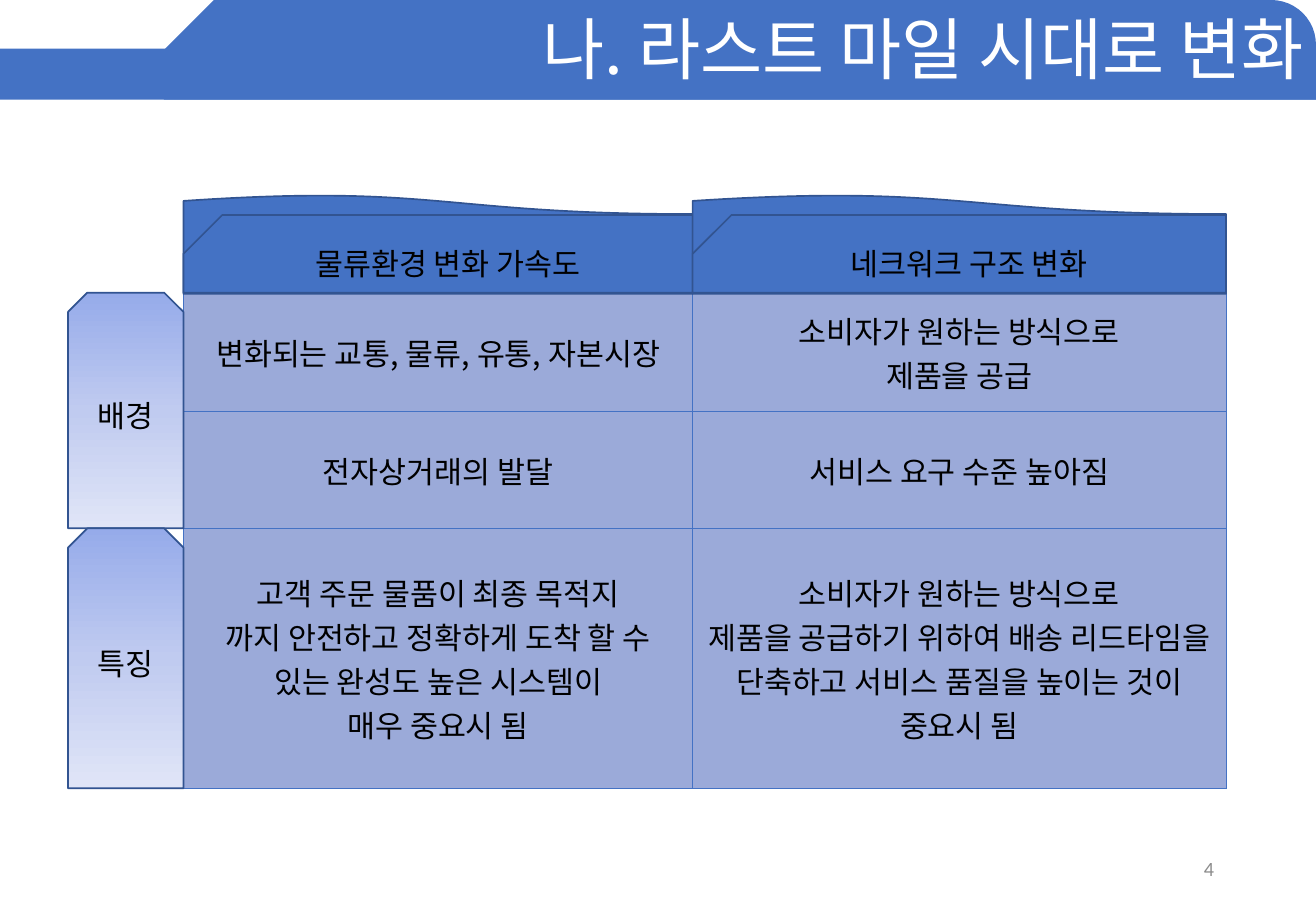
"""Build the slide on the change to the last-mile era."""
from copy import deepcopy
from dataclasses import dataclass

from lxml import etree
from pptx import Presentation
from pptx.dml.color import RGBColor
from pptx.enum.shapes import MSO_SHAPE
from pptx.enum.text import MSO_ANCHOR, PP_ALIGN
from pptx.oxml.ns import qn
from pptx.util import Inches, Pt

BLUE = RGBColor(0x44, 0x72, 0xC4)
OUTLINE = RGBColor(0x32, 0x54, 0x91)
CELL_BLUE = RGBColor(0x9B, 0xAA, 0xD9)
BLACK = RGBColor(0, 0, 0)
WHITE = RGBColor(0xFF, 0xFF, 0xFF)
GREY = RGBColor(0x8C, 0x8C, 0x8C)
LABEL_GRADIENT = (
    (0, RGBColor(0x96, 0xAB, 0xEA)),
    (0.5, RGBColor(0xC0, 0xCB, 0xF0)),
    (1, RGBColor(0xE0, 0xE5, 0xF7)),
)
KOREAN = "Noto Sans CJK KR"
LATIN = "Calibri"
CENTER, RIGHT = PP_ALIGN.CENTER, PP_ALIGN.RIGHT
MIDDLE = MSO_ANCHOR.MIDDLE
RECTANGLE = MSO_SHAPE.RECTANGLE
SNIP_ROUND = MSO_SHAPE.SNIP_ROUND_RECTANGLE
SNIP_ONE = MSO_SHAPE.SNIP_1_RECTANGLE
SNIP_TWO = MSO_SHAPE.SNIP_2_SAME_RECTANGLE
WAVE = MSO_SHAPE.FLOWCHART_DOCUMENT

SLIDE_WIDTH = 10.83
BAND_HEIGHT = 0.82
TABLE_LEFT, TABLE_TOP = 1.51, 2.41
COLUMN_WIDTHS = (4.19, 4.39)
ROW_HEIGHTS = (0.98, 0.96, 2.14)
LABEL_WIDTH = 0.95


@dataclass(frozen=True)
class Box:
    left: float
    top: float
    width: float
    height: float

    def lengths(self) -> tuple:
        return tuple(map(Inches, (self.left, self.top, self.width, self.height)))


@dataclass(frozen=True)
class Heading:
    text: str
    left: float
    width: float


@dataclass(frozen=True)
class SideLabel:
    text: str
    top: float
    height: float


HEADINGS = (
    Heading("물류환경 변화 가속도", TABLE_LEFT, COLUMN_WIDTHS[0]),
    Heading("네크워크 구조 변화", TABLE_LEFT + COLUMN_WIDTHS[0], COLUMN_WIDTHS[1]),
)
BACKGROUND_HEIGHT = sum(ROW_HEIGHTS[:2])
SIDE_LABELS = (
    SideLabel("배경", TABLE_TOP, BACKGROUND_HEIGHT),
    SideLabel("특징", TABLE_TOP + BACKGROUND_HEIGHT, ROW_HEIGHTS[2]),
)
CONTENT = (
    ("변화되는 교통, 물류, 유통, 자본시장", "소비자가 원하는 방식으로\n제품을 공급"),
    ("전자상거래의 발달", "서비스 요구 수준 높아짐"),
    (
        "고객 주문 물품이 최종 목적지\n까지 안전하고 정확하게 도착 할 수\n"
        "있는 완성도 높은 시스템이\n매우 중요시 됨",
        "소비자가 원하는 방식으로\n제품을 공급하기 위하여 배송 리드타임을 "
        "단축하고 서비스 품질을 높이는 것이 중요시 됨",
    ),
)


def write(frame, text: str, size: float = 18, color: RGBColor = BLACK,
          align=CENTER, face: str = KOREAN) -> None:
    frame.text = text
    frame.word_wrap = True
    for paragraph in frame.paragraphs:
        paragraph.alignment = align
        font = paragraph.font
        font.size, font.name = Pt(size), face
        font.color.rgb = color
        defaults = paragraph._p.pPr.find(qn("a:defRPr"))
        etree.SubElement(defaults, qn("a:ea"), typeface=face)


def add_panel(slide, kind, box: Box, outlined: bool = True, flip: str = ""):
    panel = slide.shapes.add_shape(kind, *box.lengths())
    panel.shadow.inherit = False
    panel.fill.solid()
    panel.fill.fore_color.rgb = BLUE
    if outlined:
        panel.line.color.rgb = OUTLINE
        panel.line.width = Pt(1)
    else:
        panel.line.fill.background()
    if flip:
        panel.element.spPr.xfrm.set(flip, "1")
    return panel


def add_title(slide) -> None:
    add_panel(slide, RECTANGLE, Box(0, 0.4, SLIDE_WIDTH, 0.42), False)
    band = add_panel(slide, SNIP_ROUND, Box(1.35, 0, 9.48, BAND_HEIGHT), False, "flipH")
    band.adjustments[0], band.adjustments[1] = 0.449, 0.5
    title = slide.shapes.title
    slide.shapes.element.append(title.element)
    title.left, title.top, title.width, title.height = Box(
        0, 0.02, SLIDE_WIDTH, BAND_HEIGHT).lengths()
    write(title.text_frame, "나. 라스트 마일 시대로 변화", 40, WHITE, RIGHT)
    title.text_frame.vertical_anchor = MIDDLE
    title.text_frame.paragraphs[0].line_spacing = 0.9


def style_cell(cell, text: str) -> None:
    write(cell.text_frame, text)
    cell.vertical_anchor = MIDDLE
    properties = cell._tc.get_or_add_tcPr()
    for side in ("lnL", "lnR", "lnT", "lnB"):
        border = etree.SubElement(properties, qn(f"a:{side}"), w=str(Pt(0.5)))
        paint = etree.SubElement(border, qn("a:solidFill"))
        etree.SubElement(paint, qn("a:srgbClr"), val=str(BLUE))
    cell.fill.solid()
    cell.fill.fore_color.rgb = CELL_BLUE


def add_comparison(slide) -> None:
    box = Box(TABLE_LEFT, TABLE_TOP, sum(COLUMN_WIDTHS), sum(ROW_HEIGHTS))
    table = slide.shapes.add_table(
        len(ROW_HEIGHTS), len(COLUMN_WIDTHS), *box.lengths()).table
    table.first_row = table.horz_banding = False
    for column, width in zip(table.columns, COLUMN_WIDTHS):
        column.width = Inches(width)
    for row, height, texts in zip(table.rows, ROW_HEIGHTS, CONTENT):
        row.height = Inches(height)
        for cell, text in zip(row.cells, texts):
            style_cell(cell, text)


def add_heading(slide, heading: Heading) -> None:
    add_panel(slide, WAVE, Box(heading.left, 1.6, heading.width, 0.82), flip="flipV")
    front = add_panel(
        slide, SNIP_ONE, Box(heading.left, 1.77, heading.width, 0.64), flip="flipH")
    front.adjustments[0] = 0.5
    write(front.text_frame, heading.text)


def add_side_label(slide, label: SideLabel) -> None:
    box = Box(TABLE_LEFT - LABEL_WIDTH, label.top, LABEL_WIDTH, label.height)
    tab = add_panel(slide, SNIP_TWO, box)
    tab.fill.gradient()
    tab.fill.gradient_angle = 270
    stop_list = tab.element.spPr.find(f".//{qn('a:gsLst')}")
    stop_list.insert(1, deepcopy(stop_list[0]))
    for stop, (position, color) in zip(tab.fill.gradient_stops, LABEL_GRADIENT):
        stop.position = position
        stop.color.rgb = color
    write(tab.text_frame, label.text)


def add_page_number(slide) -> None:
    number = slide.shapes.add_textbox(*Box(7.65, 6.95, 2.44, 0.4).lengths())
    write(number.text_frame, "4", 12, GREY, RIGHT, LATIN)
    number.text_frame.vertical_anchor = MIDDLE


def main() -> None:
    deck = Presentation()
    deck.slide_width, deck.slide_height = Inches(SLIDE_WIDTH), Inches(7.5)
    slide = deck.slides.add_slide(deck.slide_layouts[5])
    add_title(slide)
    add_comparison(slide)
    add_page_number(slide)
    for heading in HEADINGS:
        add_heading(slide, heading)
    for label in SIDE_LABELS:
        add_side_label(slide, label)
    deck.save("out.pptx")


if __name__ == "__main__":
    main()
